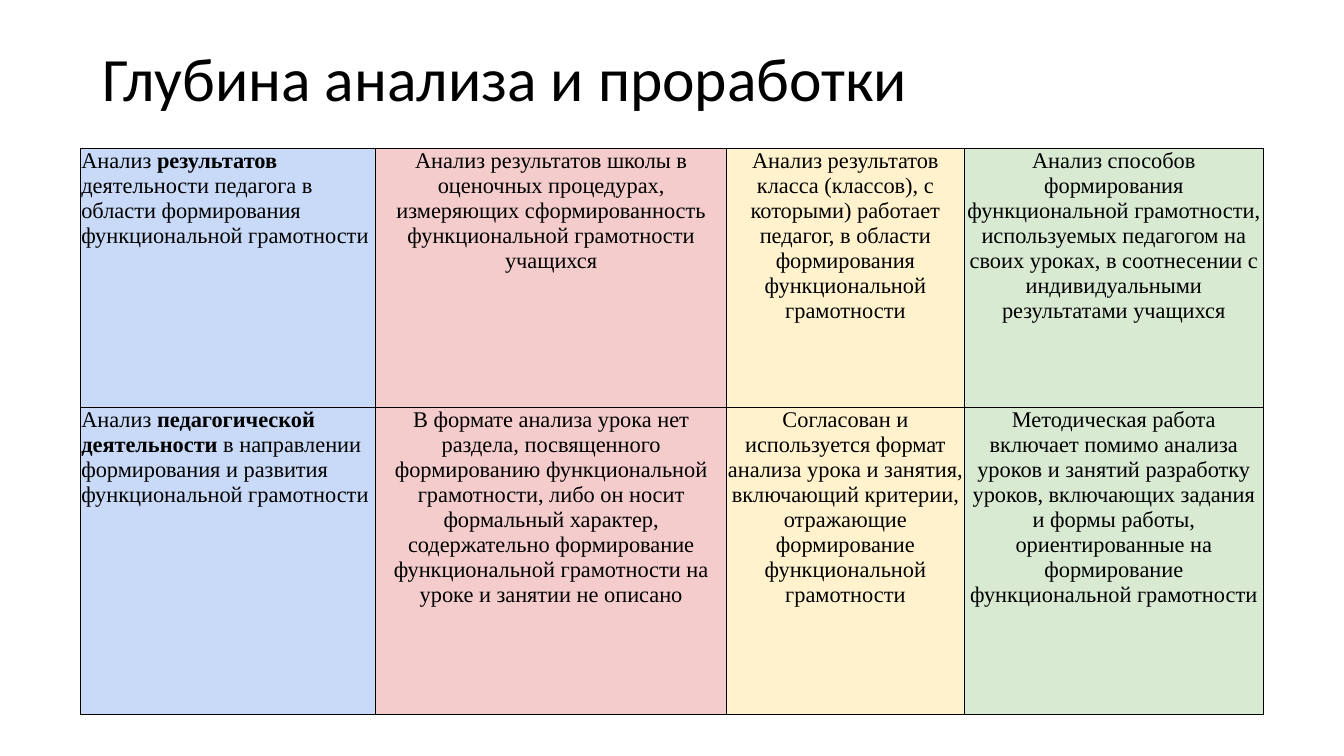
from lxml import etree
from pptx import Presentation
from pptx.dml.color import RGBColor
from pptx.enum.text import MSO_ANCHOR, MSO_AUTO_SIZE, PP_ALIGN
from pptx.oxml.ns import qn
from pptx.util import Cm, Pt

LEFT, CENTER = PP_ALIGN.LEFT, PP_ALIGN.CENTER
TOP, MIDDLE = MSO_ANCHOR.TOP, MSO_ANCHOR.MIDDLE
NO_FIT = MSO_AUTO_SIZE.NONE

TITLE = "Глубина анализа и проработки"
FILLS = ["C9DAF8", "F4CCCC", "FFF2CC", "D9EAD3"]
WIDTHS = [7.44, 8.84, 5.99, 7.54]
HEIGHTS = [6.53, 7.75]
# Asterisks enclose bold words.
ROWS = [
    [
        "Анализ *результатов* деятельности педагога в области формирования "
        "функциональной грамотности",
        "Анализ результатов школы в оценочных процедурах, измеряющих "
        "сформированность функциональной грамотности учащихся",
        "Анализ результатов класса (классов), с которыми) работает педагог, "
        "в области формирования функциональной грамотности",
        "Анализ способов формирования функциональной грамотности, используемых "
        "педагогом на своих уроках, в соотнесении с индивидуальными "
        "результатами учащихся",
    ],
    [
        "Анализ *педагогической деятельности* в направлении формирования "
        "и развития функциональной грамотности",
        "В формате анализа урока нет раздела, посвященного формированию "
        "функциональной грамотности, либо он носит формальный характер, "
        "содержательно формирование функциональной грамотности на уроке "
        "и занятии не описано",
        "Согласован и используется формат анализа урока и занятия, включающий "
        "критерии, отражающие формирование функциональной грамотности",
        "Методическая работа включает помимо анализа уроков и занятий "
        "разработку уроков, включающих задания и формы работы, "
        "ориентированные на формирование функциональной грамотности",
    ],
]


def color(code):
    return RGBColor.from_string(code)


def style(run, face, size, bold=False):
    run.font.name = face
    run.font.size = Pt(size)
    run.font.bold = bold
    run.font.color.rgb = color("000000")


def border(cell, code, width):
    """Draw all four sides; call before the fill, which must follow in the XML."""
    props = cell._tc.get_or_add_tcPr()
    for side in ("a:lnL", "a:lnR", "a:lnT", "a:lnB"):
        line = etree.SubElement(props, qn(side), w=str(Pt(width)))
        fill = etree.SubElement(line, qn("a:solidFill"))
        etree.SubElement(fill, qn("a:srgbClr"), val=code)


def add_title(slide, left, top, width, height):
    title = slide.shapes.title
    title.left, title.top = Cm(left), Cm(top)
    title.width, title.height = Cm(width), Cm(height)
    frame = title.text_frame
    frame.text = TITLE
    frame.auto_size = NO_FIT
    frame.vertical_anchor = MIDDLE
    para = frame.paragraphs[0]
    para.alignment = LEFT
    para.line_spacing = 0.9
    style(para.runs[0], "Calibri", 44)


def fill_cell(cell, text, code, align):
    border(cell, "000000", 0.5)
    cell.fill.solid()
    cell.fill.fore_color.rgb = color(code)
    cell.margin_left = cell.margin_right = cell.margin_top = Cm(0.02)
    cell.margin_bottom = Cm(0)
    cell.vertical_anchor = TOP
    para = cell.text_frame.paragraphs[0]
    para.alignment = align
    for i, part in enumerate(text.split("*")):
        run = para.add_run()
        run.text = part
        style(run, "Times New Roman", 16, bold=i % 2 == 1)


def add_grid(slide, left, top, widths, heights):
    table = slide.shapes.add_table(
        len(heights), len(widths), Cm(left), Cm(top),
        Cm(sum(widths)), Cm(sum(heights))).table
    table.first_row = table.horz_banding = False
    for col, width in zip(table.columns, widths):
        col.width = Cm(width)
    for row, height, texts in zip(table.rows, heights, ROWS):
        row.height = Cm(height)
        for i, (cell, text) in enumerate(zip(row.cells, texts)):
            fill_cell(cell, text, FILLS[i], CENTER if i else LEFT)


def main():
    deck = Presentation()
    deck.slide_width, deck.slide_height = Cm(33.87), Cm(19.05)
    slide = deck.slides.add_slide(deck.slide_layouts[5])
    add_title(slide, 2.34, 1.02, 29.21, 2.06)
    add_grid(slide, 2.03, 3.73, WIDTHS, HEIGHTS)
    deck.save("out.pptx")


if __name__ == "__main__":
    main()
